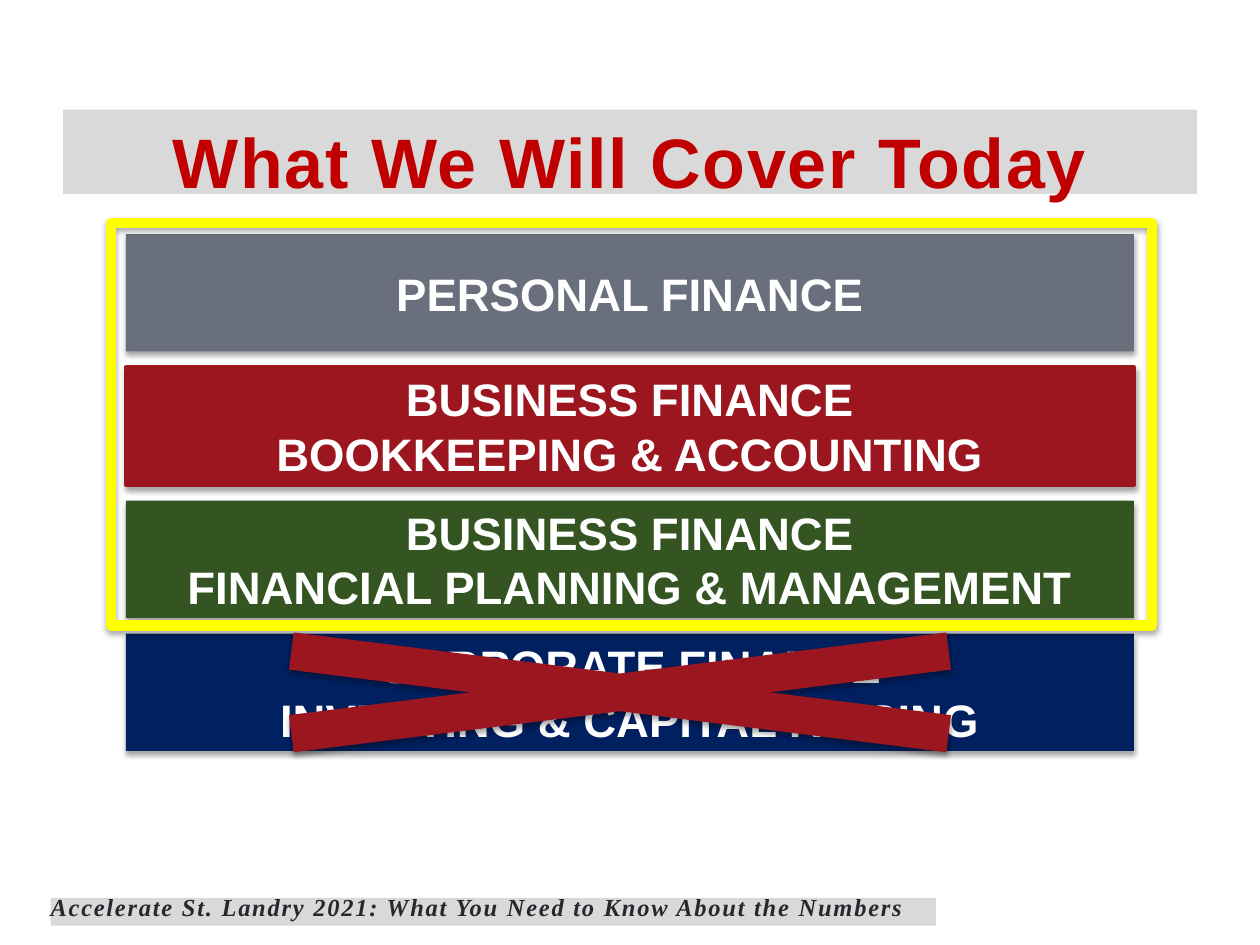
from lxml import etree
from pptx import Presentation
from pptx import util as u
from pptx.dml.color import RGBColor
from pptx.enum import shapes, text
from pptx.oxml import ns

COLORS = {
    "band": "D9D9D9", "title": "C00000", "footer": "26282D", "white": "FFFFFF",
    "gray": "6A6F7D", "red": "9C1620", "green": "345522", "navy": "002060",
    "yellow": "FFFF00", "shadow": "000000",
}
TOPICS = [
    ("PERSONAL FINANCE", "gray"),
    ("BUSINESS FINANCE\nBOOKKEEPING & ACCOUNTING", "red"),
    ("BUSINESS FINANCE\nFINANCIAL PLANNING & MANAGEMENT", "green"),
    ("CORPORATE FINANCE\nINVESTING & CAPITAL RAISING", "navy"),
]


def rgb(name):
    """Return the named colour."""
    return RGBColor.from_string(COLORS[name])


def cm(box):
    """Convert a box in centimetres to lengths."""
    return [u.Cm(v) for v in box]


def add_shadow(sp):
    """Give a shape a soft shadow falling straight down."""
    sp.shadow.inherit = False
    effects = sp._element.spPr.find(ns.qn("a:effectLst"))
    shadow = etree.SubElement(effects, ns.qn("a:outerShdw"), blurRad=str(u.Pt(3.1)),
                              dist=str(u.Pt(1.8)), dir="5400000", rotWithShape="0")
    color = etree.SubElement(shadow, ns.qn("a:srgbClr"), val=COLORS["shadow"])
    etree.SubElement(color, ns.qn("a:alpha"), val="35000")


def add_block(s, kind, box, fill=None, line=None, width=0):
    """Add a shadowed shape with an optional fill and outline."""
    sp = s.shapes.add_shape(kind, *cm(box))
    if fill:
        sp.fill.solid()
        sp.fill.fore_color.rgb = rgb(fill)
    else:
        sp.fill.background()
    if line:
        sp.line.color.rgb = rgb(line)
        sp.line.width = u.Pt(width)
    else:
        sp.line.fill.background()
    add_shadow(sp)
    return sp


def set_text(sp, words, font, size, color, align, italic=False, spacing=0):
    """Write bold text and format every run alike."""
    tf = sp.text_frame
    tf.word_wrap = True
    tf.text = words
    for p in tf.paragraphs:
        p.alignment = align
        for r in p.runs:
            r.font.name, r.font.size = font, u.Pt(size)
            r.font.bold, r.font.italic = True, italic
            r.font.color.rgb = rgb(color)
            if spacing:
                r.font._element.set("spc", str(spacing))
    return tf


def format_band(sp, inset=0):
    """Fill a text band and tighten its margins."""
    sp.fill.solid()
    sp.fill.fore_color.rgb = rgb("band")
    tf = sp.text_frame
    tf.auto_size = text.MSO_AUTO_SIZE.NONE
    tf.vertical_anchor = text.MSO_ANCHOR.TOP
    tf.margin_left = tf.margin_right = tf.margin_bottom = 0
    tf.margin_top = u.Cm(inset)


def add_title(s, box):
    """Place the title placeholder as a banner."""
    sp = s.shapes.title
    sp.left, sp.top, sp.width, sp.height = cm(box)
    set_text(sp, "What We Will Cover Today", "Arial", 40, "title",
             text.PP_ALIGN.CENTER, spacing=100)
    format_band(sp, inset=0.18)


def add_topics(s, box, gap):
    """Stack the topic bars, frame those covered and cross out the last."""
    left, top, width, height = box
    pitch = (height + gap) / len(TOPICS)
    bar = pitch - gap
    for i, (words, color) in enumerate(TOPICS):
        sp = add_block(s, shapes.MSO_SHAPE.RECTANGLE, (left, top + i * pitch, width, bar),
                       color, "red" if color == "red" else None, 2.25)
        tf = set_text(sp, words, "Arial", 26, "white", text.PP_ALIGN.CENTER)
        tf.vertical_anchor = text.MSO_ANCHOR.MIDDLE
    add_block(s, shapes.MSO_SHAPE.RECTANGLE,
              (left - 0.3, top - 0.22, width + 0.66, 3 * pitch + 0.06), line="yellow", width=6)
    add_block(s, shapes.MSO_SHAPE.MATH_MULTIPLY,
              (left - 2.79, top + 3 * pitch - 0.42, width + 5.18, bar + 0.84), "red")


def add_footer(s, box):
    """Add the event name along the bottom."""
    sp = s.shapes.add_textbox(*cm(box))
    tf = set_text(sp, "Accelerate St. Landry 2021: What You Need to Know About the Numbers",
                  "Times New Roman", 14, "footer", text.PP_ALIGN.LEFT, italic=True, spacing=100)
    tf.paragraphs[0].line_spacing = 0.8
    format_band(sp)


def main():
    """Build and save the slide."""
    prs = Presentation()
    prs.slide_width, prs.slide_height = u.Cm(25.4), u.Cm(19.05)
    s = prs.slides.add_slide(prs.slide_layouts[5])
    add_title(s, (1.27, 2.21, 22.86, 1.7))
    add_topics(s, (2.54, 4.72, 20.32, 10.42), gap=0.32)
    add_footer(s, (1.02, 18.1, 17.85, 0.56))
    prs.save("out.pptx")


if __name__ == "__main__":
    main()
